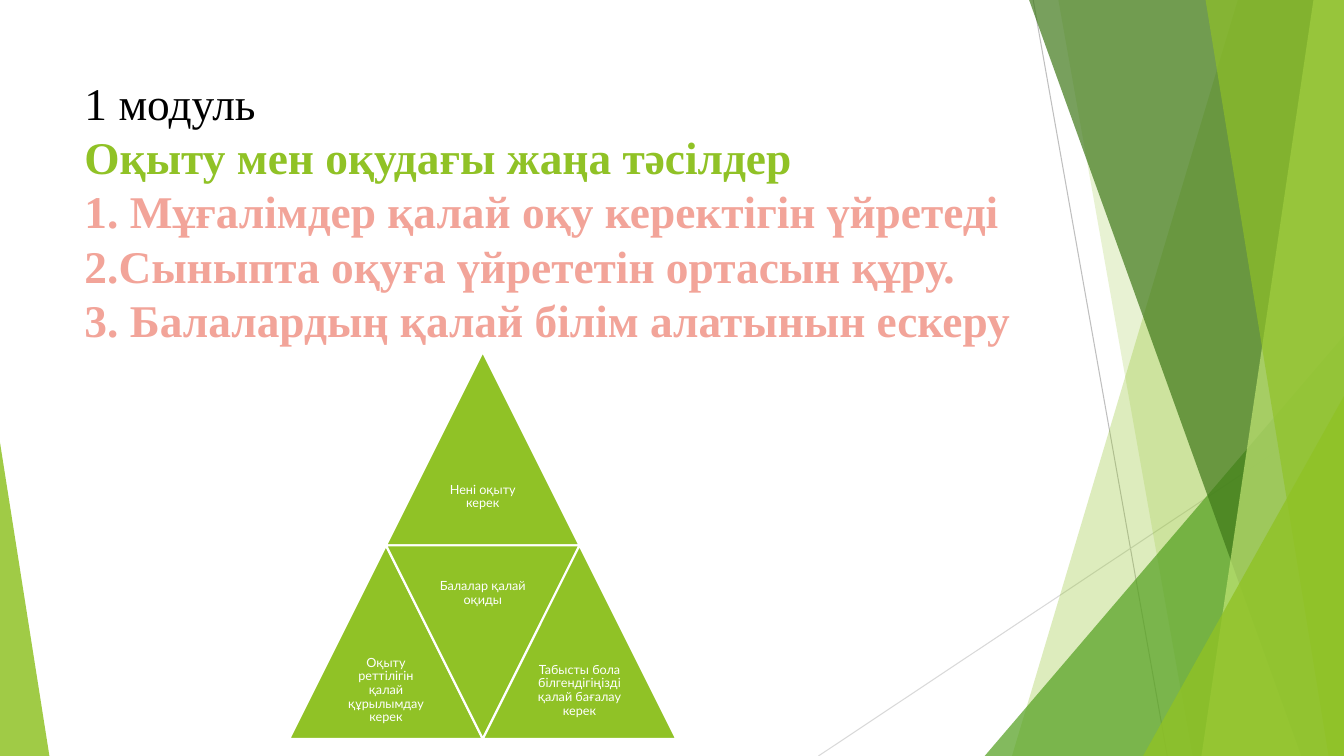
from dataclasses import dataclass
from typing import Any

from lxml import etree
from pptx import Presentation
from pptx import util as u
from pptx.dml import color
from pptx.enum import shapes, text
from pptx.oxml import ns

WIDE, HIGH = 960, 540
COLORS = {
    "lime": "90C226", "green": "54A021", "dark": "3F7819", "pale": "C0E474",
    "rose": "F2A499", "black": "000000", "white": "FFFFFF",
    "gray": "BFBFBF", "light": "D9D9D9",
}
SIDE = 138.24
HALF = SIDE / 2
LEFT, TOP = 206.6, 251.3


@dataclass
class Ray:
    start: tuple[float, float]
    end: tuple[float, float]
    hue: str


@dataclass
class Pane:
    top: float
    low: float
    hue: str
    alpha: int


@dataclass
class Wedge:
    left: float
    top: float
    width: float
    apex: float
    hue: str
    alpha: int


@dataclass
class Part:
    col: int
    row: int
    words: str
    turned: bool = False


@dataclass
class Line:
    words: str
    hue: str
    bold: bool = True


RAYS = [
    Ray((738, 0), (833.8, HIGH), "gray"),
    Ray((WIDE, 290.2), (584.6, HIGH), "light"),
]
FACETS: list[Pane | Wedge] = [
    Pane(884.2, 722.9, "lime", 30),
    Pane(756, 851.8, "lime", 20),
    Wedge(703.4, 239.8, 256.6, 1, "green", 72),
    Pane(735.1, 929.5, "dark", 70),
    Pane(938.2, 858.2, "pale", 70),
    Pane(861.1, 949, "lime", 65),
    Wedge(816.5, 283, 143.5, 1, "lime", 80),
    Wedge(0, 316.1, 35.3, 0, "lime", 85),
]
LINES = [
    Line("1 модуль", "black", False),
    Line("Оқыту мен оқудағы жаңа тәсілдер", "lime"),
    Line("1. Мұғалімдер қалай оқу керектігін үйретеді", "rose"),
    Line("2.Сыныпта оқуға үйрететін ортасын құру.", "rose"),
    Line("3. Балалардың қалай білім алатынын ескеру", "rose"),
]
PARTS = [
    Part(1, 0, "Нені оқыту керек"),
    Part(0, 1, "Оқыту реттілігін қалай құрылымдау керек"),
    Part(1, 1, "Балалар қалай оқиды", True),
    Part(2, 1, "Табысты бола білгендігіңізді қалай бағалау керек"),
]


def tint(hue: str) -> color.RGBColor:
    return color.RGBColor.from_string(COLORS[hue])


def paint(shape: Any, hue: str, alpha: int = 100) -> None:
    shape.shadow.inherit = False
    shape.fill.solid()
    shape.fill.fore_color.rgb = tint(hue)
    shape.line.fill.background()
    if alpha < 100:
        node = shape.fill._xPr.find(".//" + ns.qn("a:srgbClr"))
        etree.SubElement(node, ns.qn("a:alpha"), val=str(alpha * 1000))


def draw_ray(slide: Any, ray: Ray) -> None:
    ends = [u.Pt(n) for n in (*ray.start, *ray.end)]
    line = slide.shapes.add_connector(shapes.MSO_CONNECTOR.STRAIGHT, *ends)
    line.line.color.rgb = tint(ray.hue)
    line.line.width = u.Pt(0.75)
    etree.SubElement(line._element.spPr, ns.qn("a:effectLst"))


def draw_pane(slide: Any, pane: Pane) -> None:
    form = slide.shapes.build_freeform(u.Pt(pane.top), 0)
    spots = [(WIDE, 0), (WIDE, HIGH), (pane.low, HIGH)]
    form.add_line_segments([(u.Pt(x), u.Pt(y)) for x, y in spots], close=True)
    paint(form.convert_to_shape(), pane.hue, pane.alpha)


def add_peak(slide: Any, *box: float) -> Any:
    return slide.shapes.add_shape(
        shapes.MSO_SHAPE.ISOSCELES_TRIANGLE, *[u.Pt(n) for n in box])


def draw_wedge(slide: Any, wedge: Wedge) -> None:
    shape = add_peak(slide, wedge.left, wedge.top, wedge.width, HIGH - wedge.top)
    shape.adjustments[0] = wedge.apex
    paint(shape, wedge.hue, wedge.alpha)


def add_frame(slide: Any, pad: float, *box: float) -> Any:
    frame = slide.shapes.add_textbox(*[u.Pt(n) for n in box]).text_frame
    frame.word_wrap = True
    frame.margin_left = frame.margin_right = u.Pt(2 * pad)
    frame.margin_top = frame.margin_bottom = u.Pt(pad)
    return frame


def add_run(para: Any, words: str, face: str, size: float, hue: str,
            bold: bool = False) -> None:
    run = para.add_run()
    run.text = words
    run.font.name = face
    run.font.size = u.Pt(size)
    run.font.bold = bold
    run.font.color.rgb = tint(hue)


def draw_title(slide: Any) -> None:
    para = add_frame(slide, 3.6, 53.3, 50.2, 676.8, 205).paragraphs[0]
    para.line_spacing = u.Pt(38.8)
    for i, line in enumerate(LINES):
        if i:
            para.add_line_break()
        add_run(para, line.words, "Times New Roman", 32.4, line.hue, line.bold)


def draw_part(slide: Any, part: Part) -> None:
    left, top = LEFT + part.col * HALF, TOP + part.row * SIDE
    shape = add_peak(slide, left, top, SIDE, SIDE)
    shape.rotation = 180 if part.turned else 0
    paint(shape, "lime")
    shape.line.color.rgb = tint("white")
    shape.line.width = u.Pt(1.5)
    drop = 0 if part.turned else HALF
    frame = add_frame(slide, 2.7, left + HALF / 2, top + drop, HALF, HALF)
    frame.margin_left = frame.margin_right = u.Pt(2.7)
    frame.vertical_anchor = text.MSO_ANCHOR.MIDDLE
    para = frame.paragraphs[0]
    para.alignment = text.PP_ALIGN.CENTER
    para.line_spacing = 0.9
    add_run(para, part.words, "Lato", 9, "white")


def main() -> None:
    deck = Presentation()
    deck.slide_width, deck.slide_height = u.Pt(WIDE), u.Pt(HIGH)
    slide = deck.slides.add_slide(deck.slide_layouts[6])
    for ray in RAYS:
        draw_ray(slide, ray)
    for facet in FACETS:
        if isinstance(facet, Pane):
            draw_pane(slide, facet)
        else:
            draw_wedge(slide, facet)
    draw_title(slide)
    for part in PARTS:
        draw_part(slide, part)
    deck.save("out.pptx")


if __name__ == "__main__":
    main()
